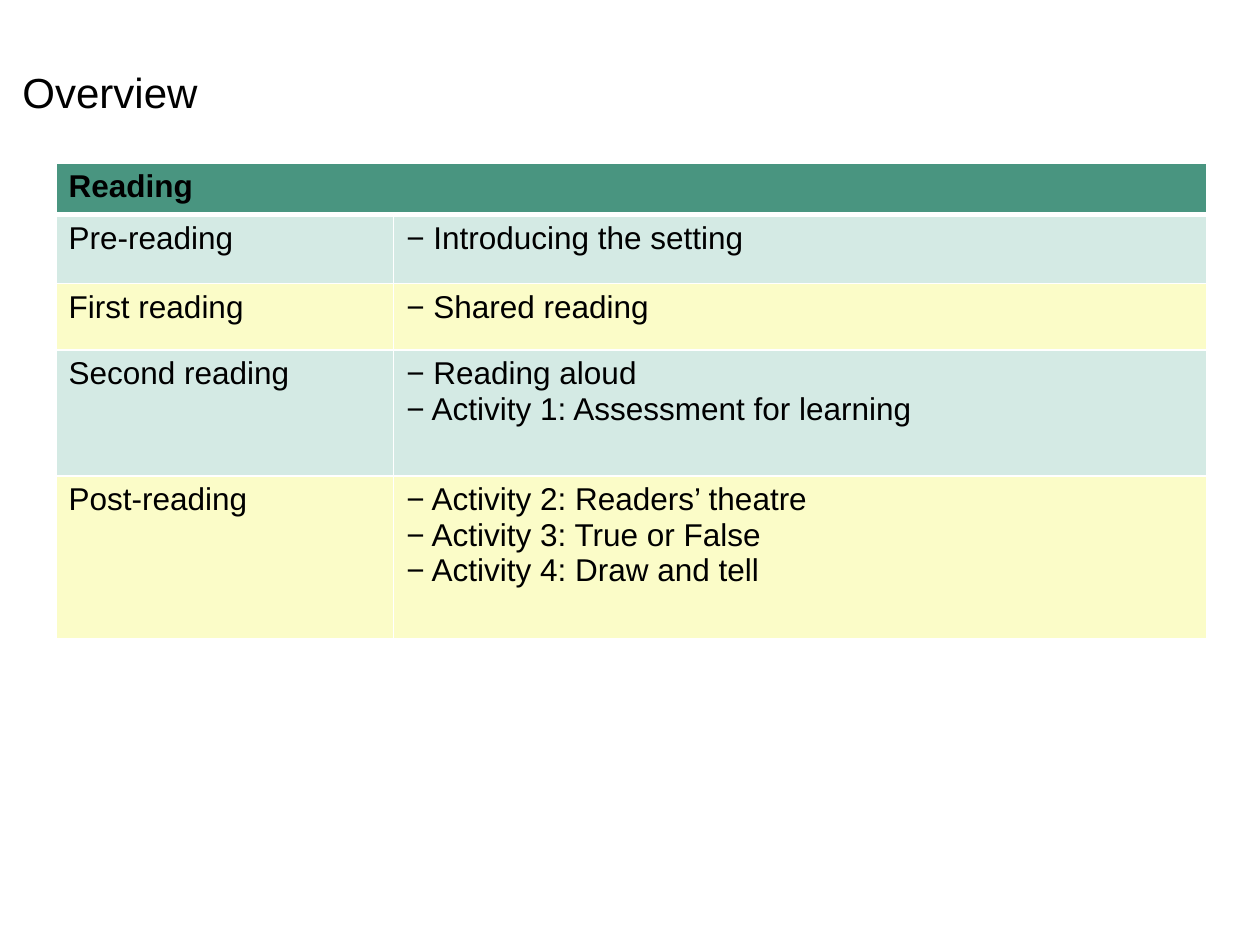
from lxml.etree import SubElement
from pptx import Presentation
from pptx.dml.color import RGBColor
from pptx.oxml.ns import qn
from pptx.util import Pt

TITLE = "Overview"
HEADER = "Reading"
STAGES = [
    ("Pre-reading", ["Introducing the setting"]),
    ("First reading", ["Shared reading"]),
    ("Second reading", ["Reading aloud", "Activity 1: Assessment for learning"]),
    ("Post-reading", ["Activity 2: Readers’ theatre", "Activity 3: True or False",
                      "Activity 4: Draw and tell"]),
]
COLORS = {"text": "000000", "header": "499580", "odd": "D4EAE4",
          "even": "FBFCC8", "border": "FFFFFF"}
FONT = "Arial"
COL_WIDTHS = [193, 464.5]
ROW_HEIGHTS = [29.5, 39.5, 38, 72, 93]


def write(tf, lines, size, bold=False):
    for i, line in enumerate(lines):
        p = tf.paragraphs[0] if i == 0 else tf.add_paragraph()
        p.text = line
        p.font.name = FONT
        p.font.size = Pt(size)
        p.font.bold = bold
        p.font.color.rgb = RGBColor.from_string(COLORS["text"])


def style_cell(cell, fill, bottom=1):
    """Give a cell white borders, then its fill."""
    tcPr = cell._tc.get_or_add_tcPr()
    for side, width in (("L", 1), ("R", 1), ("T", 1), ("B", bottom)):
        ln = SubElement(tcPr, qn(f"a:ln{side}"), w=str(Pt(width)))
        color = SubElement(SubElement(ln, qn("a:solidFill")), qn("a:srgbClr"))
        color.set("val", COLORS["border"])
    cell.fill.solid()
    cell.fill.fore_color.rgb = RGBColor.from_string(COLORS[fill])


prs = Presentation()
prs.slide_width, prs.slide_height = Pt(720), Pt(540)
s = prs.slides.add_slide(prs.slide_layouts[6])

title = s.shapes.add_textbox(Pt(5.75), Pt(34.5), Pt(116), Pt(36))
write(title.text_frame, [TITLE], 24)

table = s.shapes.add_table(len(ROW_HEIGHTS), len(COL_WIDTHS), Pt(32), Pt(93),
                           Pt(sum(COL_WIDTHS)), Pt(sum(ROW_HEIGHTS))).table
for column, width in zip(table.columns, COL_WIDTHS):
    column.width = Pt(width)
for row, height in zip(table.rows, ROW_HEIGHTS):
    row.height = Pt(height)

for cell in table.rows[0].cells:
    style_cell(cell, "header", bottom=3)
table.cell(0, 0).merge(table.cell(0, 1))
write(table.cell(0, 0).text_frame, [HEADER], 18, bold=True)

for i, (stage, steps) in enumerate(STAGES, start=1):
    for j, lines in enumerate(([stage], [f"− {step}" for step in steps])):
        cell = table.cell(i, j)
        style_cell(cell, "odd" if i % 2 else "even")
        write(cell.text_frame, lines, 18)

prs.save("out.pptx")
